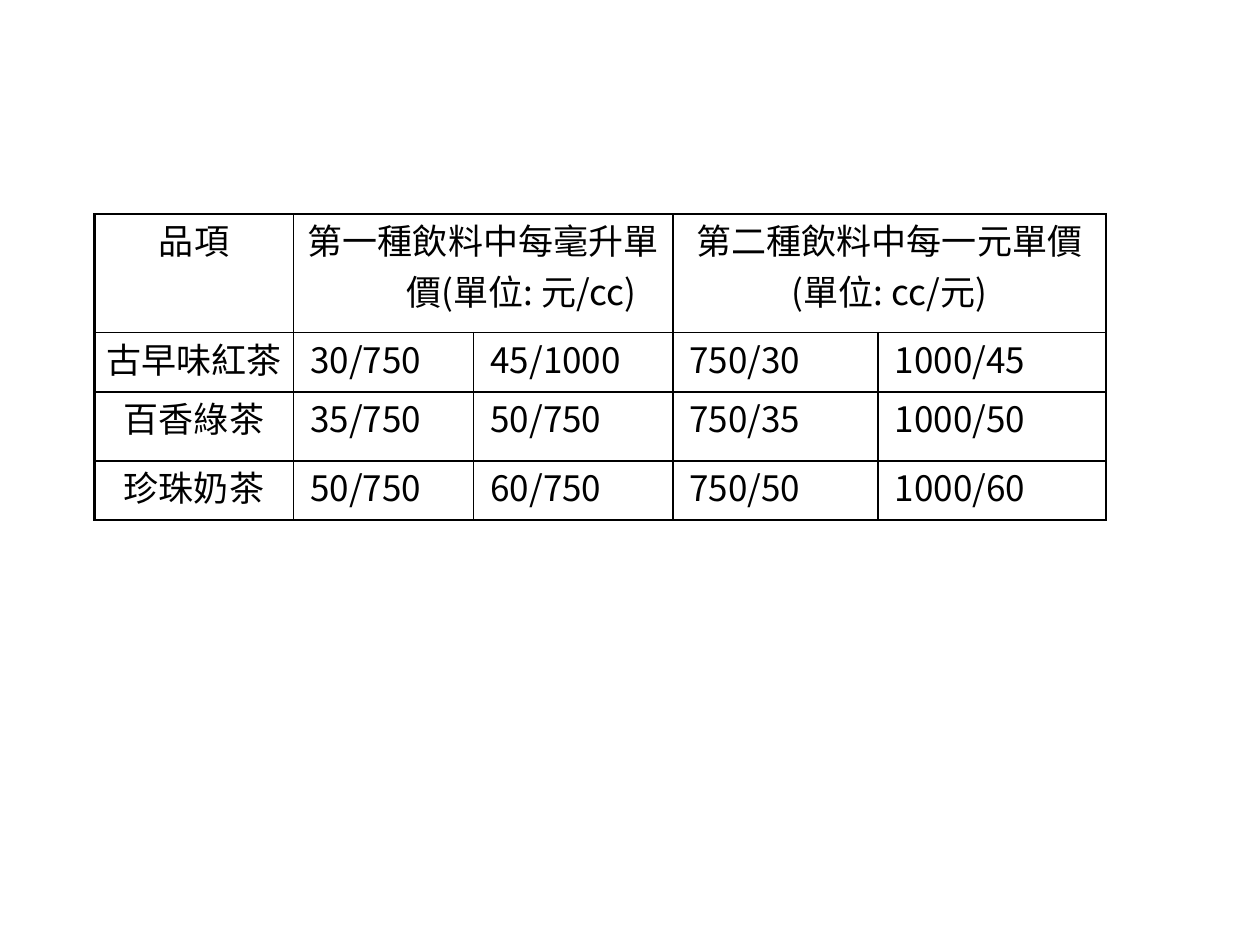
from lxml.etree import SubElement
from pptx import Presentation
from pptx.dml.color import RGBColor
from pptx.enum.text import MSO_ANCHOR, PP_ALIGN
from pptx.oxml.ns import qn
from pptx.util import Pt

FONT = "Noto Sans CJK SC"
BLACK = "000000"
INNER_LINE, OUTER_LINE = 1, 1.5

# Each heading: first column, columns covered, paragraphs
HEADINGS = [
    (0, 1, ["品項"]),
    (1, 2, ["第一種飲料中每毫升單價(單位: 元/cc)"]),
    (3, 2, ["第二種飲料中每一元單價", "(單位: cc/元)"]),
]
DRINKS = [
    ("古早味紅茶", "30/750", "45/1000", "750/30", "1000/45"),
    ("百香綠茶", "35/750", "50/750", "750/35", "1000/50"),
    ("珍珠奶茶", "50/750", "60/750", "750/50", "1000/60"),
]
COLUMN_WIDTHS = [113.76, 102.96, 113.76, 117.36, 130.32]
ROW_HEIGHTS = [67.68, 33.84, 39.6, 33.84]
LEFT, TOP = 54, 122.4
HANGING_INDENT = 43.9


def color(hex_string):
    return RGBColor.from_string(hex_string)


def write(cell, paragraphs, align, size=20, font=FONT, ink=BLACK):
    cell.margin_left = cell.margin_right = Pt(5.04)
    cell.margin_top = cell.margin_bottom = Pt(0)
    cell.vertical_anchor = MSO_ANCHOR.TOP
    frame = cell.text_frame
    for index, text in enumerate(paragraphs):
        paragraph = frame.add_paragraph() if index else frame.paragraphs[0]
        paragraph.alignment = align
        properties = paragraph._p.get_or_add_pPr()
        properties.set("marL", str(Pt(HANGING_INDENT)))
        properties.set("indent", str(-Pt(HANGING_INDENT)))
        run = paragraph.add_run()
        run.text = text
        run.font.size = Pt(size)
        run.font.name = font
        run.font.color.rgb = color(ink)
        east_asian = SubElement(run.font._element, qn("a:ea"))
        east_asian.set("typeface", font)


def add_borders(cell, row, column, span=1):
    """Draw the four cell edges, heavier where they bound the whole table."""
    on_outside = {
        "a:lnL": column == 0,
        "a:lnR": column + span == len(COLUMN_WIDTHS),
        "a:lnT": row == 0,
        "a:lnB": row == len(ROW_HEIGHTS) - 1,
    }
    properties = cell._tc.get_or_add_tcPr()
    for tag, outside in on_outside.items():
        width = OUTER_LINE if outside else INNER_LINE
        line = SubElement(properties, qn(tag), w=str(Pt(width)))
        fill = SubElement(line, qn("a:solidFill"))
        SubElement(fill, qn("a:srgbClr"), val=BLACK)
    cell.fill.background()


def main():
    presentation = Presentation()
    presentation.slide_width, presentation.slide_height = Pt(720), Pt(540)
    slide = presentation.slides.add_slide(presentation.slide_layouts[6])

    prices = slide.shapes.add_table(
        len(ROW_HEIGHTS), len(COLUMN_WIDTHS), Pt(LEFT), Pt(TOP),
        Pt(sum(COLUMN_WIDTHS)), Pt(sum(ROW_HEIGHTS))).table
    prices.first_row = prices.horz_banding = False
    for column, width in zip(prices.columns, COLUMN_WIDTHS):
        column.width = Pt(width)
    for row, height in zip(prices.rows, ROW_HEIGHTS):
        row.height = Pt(height)

    for first, span, paragraphs in HEADINGS:
        heading = prices.cell(0, first)
        if span > 1:
            heading.merge(prices.cell(0, first + span - 1))
        write(heading, paragraphs, PP_ALIGN.CENTER)
        for column in range(first, first + span):
            add_borders(prices.cell(0, column), 0, column, first + span - column)

    for row, (drink, *ratios) in enumerate(DRINKS, start=1):
        write(prices.cell(row, 0), [drink], PP_ALIGN.CENTER)
        for column, ratio in enumerate(ratios, start=1):
            write(prices.cell(row, column), [f" {ratio}"], PP_ALIGN.JUSTIFY)
        for column in range(len(COLUMN_WIDTHS)):
            add_borders(prices.cell(row, column), row, column)

    presentation.save("out.pptx")


if __name__ == "__main__":
    main()
